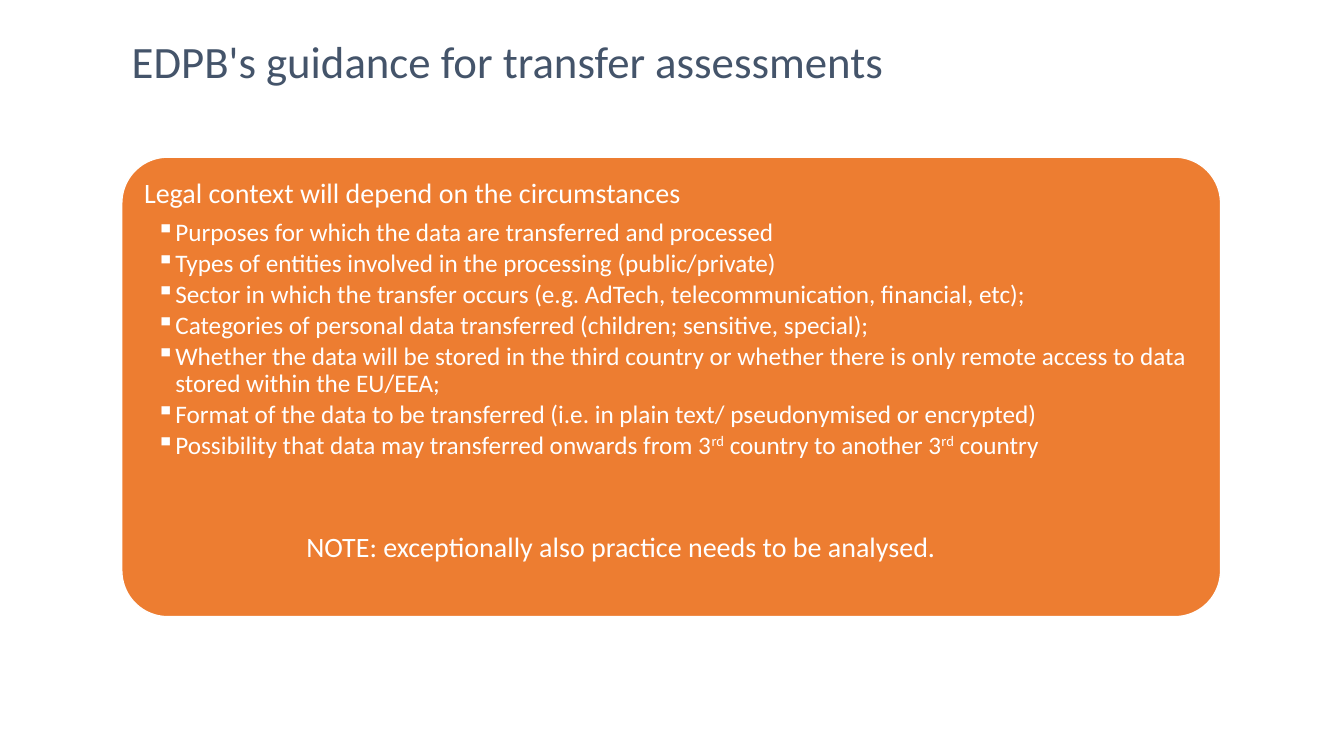
from pptx import Presentation
from pptx.dml.color import RGBColor
from pptx.enum.shapes import MSO_SHAPE
from pptx.enum.text import MSO_ANCHOR
from pptx.oxml.ns import qn
from pptx.util import Cm, Pt
from lxml.etree import SubElement

SLATE = RGBColor(0x44, 0x54, 0x6A)
ORANGE = RGBColor(0xED, 0x7D, 0x31)
WHITE = RGBColor(0xFF, 0xFF, 0xFF)

HEADING = "Legal context will depend on the circumstances"
CIRCUMSTANCES = [
    ["Purposes for which the data are transferred and processed"],
    ["Types of entities involved in the processing (public/private)"],
    ["Sector in which the transfer occurs (e.g. AdTech, telecommunication, financial, etc);"],
    ["Categories of personal data transferred (children; sensitive, special);"],
    ["Whether the data will be stored in the third country or whether there is "
     "only remote access to data stored within the EU/EEA;"],
    ["Format of the data to be transferred (i.e. in plain text/ pseudonymised or encrypted)"],
    ["Possibility that data may transferred onwards from 3", "rd",
     " country to another 3", "rd", " country"],
]


def add_text_box(left, top, width, height):
    box = page.shapes.add_textbox(Cm(left), Cm(top), Cm(width), Cm(height))
    box.text_frame.word_wrap = True
    return box.text_frame


def style(para, size, color, line_spacing=0.9, space_after=0):
    para.font.name = "Calibri"
    para.font.size = Pt(size)
    para.font.color.rgb = color
    para.line_spacing = line_spacing
    para.space_after = Pt(space_after)


deck = Presentation()
deck.slide_width = Cm(33.87)
deck.slide_height = Cm(19.05)
page = deck.slides.add_slide(deck.slide_layouts[6])

title = add_text_box(3.07, 0.1, 27.74, 3.05)
title.vertical_anchor = MSO_ANCHOR.MIDDLE
title.text = "EDPB's guidance for transfer assessments"
style(title.paragraphs[0], 32, SLATE)

panel = page.shapes.add_shape(
    MSO_SHAPE.ROUNDED_RECTANGLE, Cm(3.07), Cm(3.96), Cm(27.69), Cm(11.58))
panel.adjustments[0] = 0.1
panel.shadow.inherit = False
panel.fill.solid()
panel.fill.fore_color.rgb = ORANGE
panel.line.color.rgb = WHITE
panel.line.width = Pt(1)

context = add_text_box(3.43, 4.32, 27.03, 10.9)
context.margin_left = context.margin_right = Cm(0.2)
context.margin_top = context.margin_bottom = Cm(0.2)
context.text = HEADING
style(context.paragraphs[0], 20, WHITE, space_after=7)

for pieces in CIRCUMSTANCES:
    para = context.add_paragraph()
    para.level = 1
    style(para, 18, WHITE, space_after=2.7)
    properties = para._p.get_or_add_pPr()
    properties.set("marL", str(Cm(0.79)))
    properties.set("indent", str(-Cm(0.48)))
    bullet = SubElement(properties, qn("a:buChar"), char="▪")
    properties.remove(bullet)
    properties.find(qn("a:defRPr")).addprevious(bullet)
    for piece in pieces:
        span = para.add_run()
        span.text = piece
        if piece == "rd":
            span.font._element.set("baseline", "30000")

note = add_text_box(7.47, 13.23, 21.79, 1.12)
note.text = "NOTE: exceptionally also practice needs to be analysed."
style(note.paragraphs[0], 20, WHITE, line_spacing=1.0)

deck.save("out.pptx")
